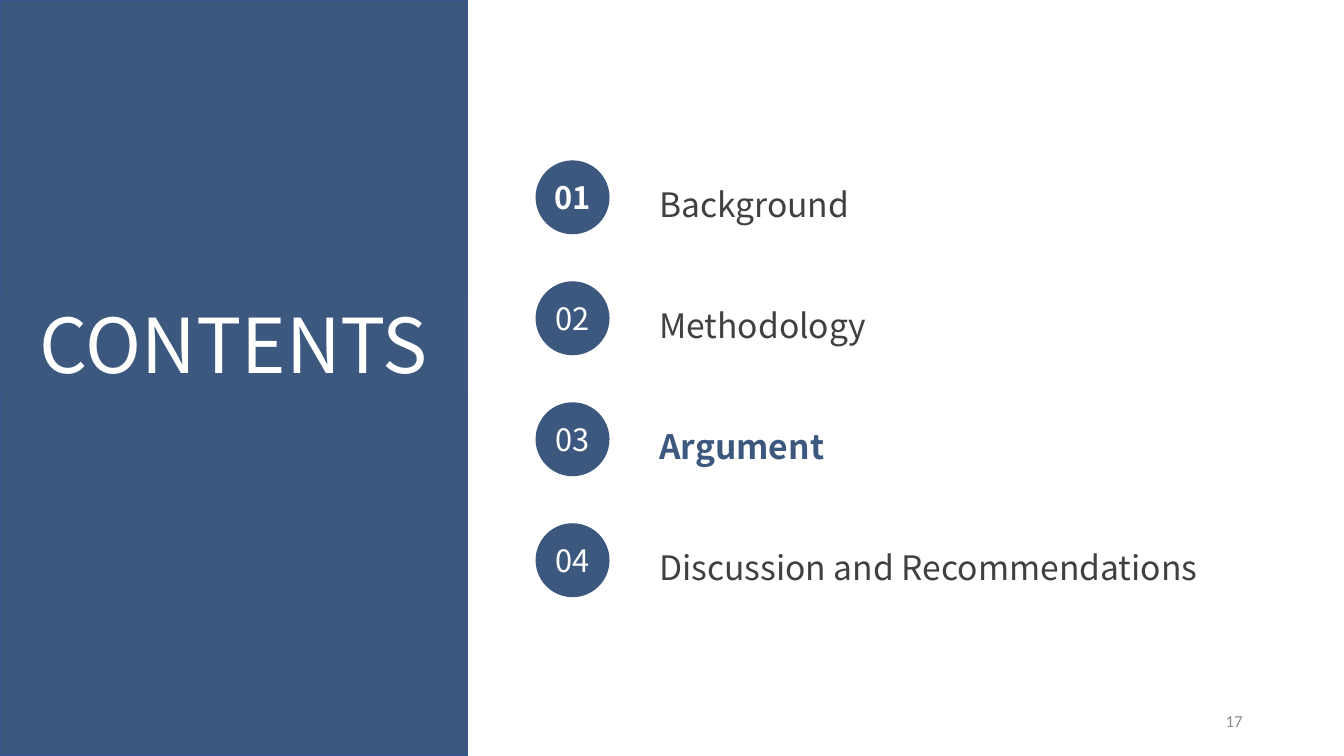
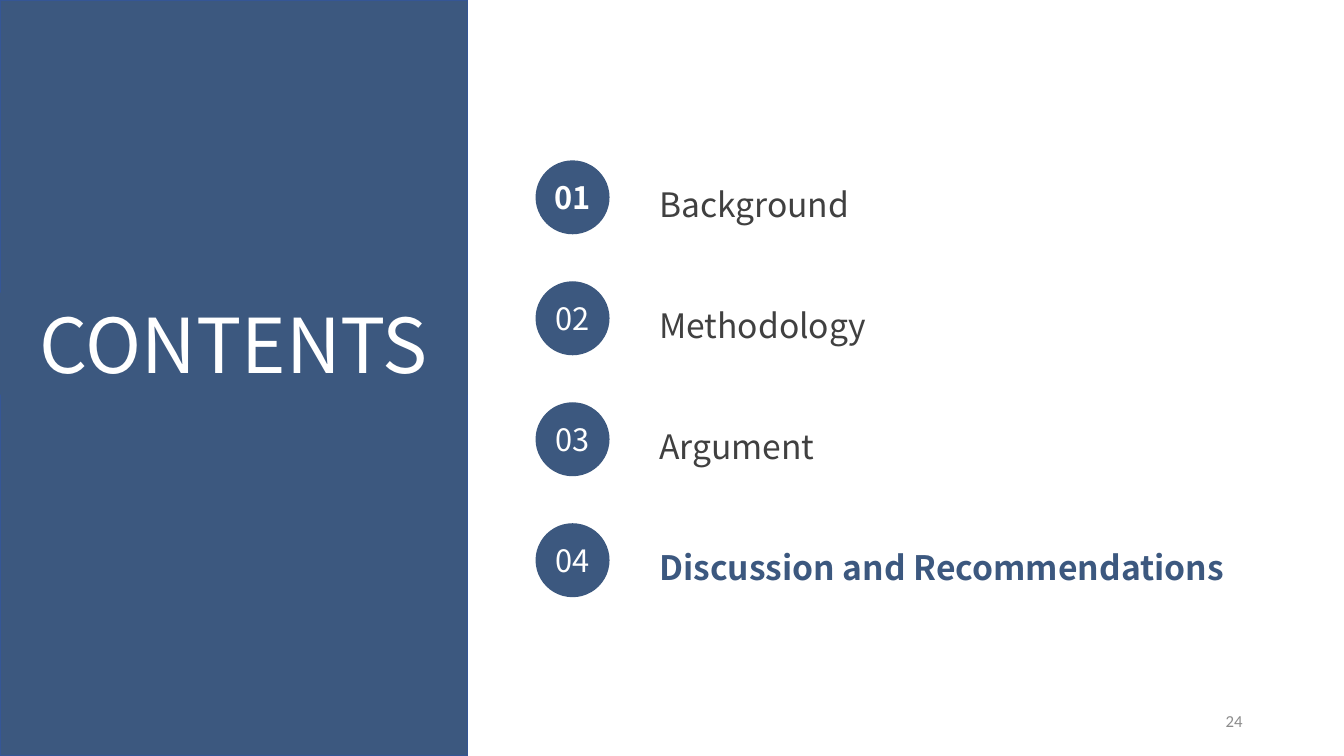
import pptx
import pptx.dml.color
import pptx.enum.shapes
import pptx.enum.text
import pptx.util
from lxml import etree

COLOURS = {
    "navy": "3C587F",
    "edge": "355696",
    "white": "FFFFFF",
    "text": "404040",
    "number": "8C8C8C",
}
FONT = "Noto Sans CJK SC"
ITEMS = ["Background", "Methodology", "Argument", "Discussion and Recommendations"]
SECTIONS = [{"page": "17", "active": "Argument"},
            {"page": "24", "active": "Discussion and Recommendations"}]
ALIGN = pptx.enum.text.PP_ALIGN
ANCHOR = pptx.enum.text.MSO_ANCHOR
SHAPE = pptx.enum.shapes.MSO_SHAPE

presentation = pptx.Presentation()
presentation.slide_width = pptx.util.Inches(13.33)
presentation.slide_height = pptx.util.Inches(7.5)
WIDTH, HEIGHT = presentation.slide_width, presentation.slide_height

panel_width = int(WIDTH * 0.348)
circle_left = int(WIDTH * 0.399)
circle_size = int(HEIGHT * 0.096)
first_row = int(HEIGHT * 0.213)
row_pitch = int(HEIGHT * 0.16)
label_line = pptx.util.Pt(34)


def rgb(name):
    return pptx.dml.color.RGBColor.from_string(COLOURS[name])


def write(paragraph, text, size, colour, font=FONT, bold=False, align=ALIGN.LEFT):
    paragraph.alignment = align
    run = paragraph.add_run()
    run.text = text
    run.font.name = font
    run.font.size = pptx.util.Pt(size)
    run.font.bold = bold
    run.font.color.rgb = rgb(colour)


for section in SECTIONS:
    slide = presentation.slides.add_slide(presentation.slide_layouts[1])
    title, body = slide.shapes.title, slide.placeholders[1]

    # Side panel with the title in front of it
    panel = slide.shapes.add_shape(SHAPE.RECTANGLE, 0, 0, panel_width, HEIGHT)
    panel.shadow.inherit = False
    panel.fill.solid()
    panel.fill.fore_color.rgb = rgb("navy")
    panel.line.color.rgb = rgb("edge")
    panel.line.width = pptx.util.Pt(1)
    panel.element.addnext(title.element)

    title.left, title.top = 0, int(HEIGHT * 0.387)
    title.width, title.height = panel_width, int(HEIGHT * 0.135)
    title.fill.solid()
    title.fill.fore_color.rgb = rgb("navy")
    title.text_frame.auto_size = pptx.enum.text.MSO_AUTO_SIZE.NONE
    title.text_frame.vertical_anchor = ANCHOR.TOP
    write(title.text_frame.paragraphs[0], "CONTENTS", size=54, colour="white",
          align=ALIGN.CENTER)

    # Section list, one row for each circle
    body.left, body.top = int(WIDTH * 0.483), int(HEIGHT * 0.227)
    body.width, body.height = int(WIDTH * 0.467), row_pitch * len(ITEMS)
    body.text_frame.auto_size = pptx.enum.text.MSO_AUTO_SIZE.NONE
    body.text_frame.vertical_anchor = ANCHOR.TOP

    for row, item in enumerate(ITEMS):
        circle = slide.shapes.add_shape(SHAPE.OVAL, circle_left, first_row + row * row_pitch,
                                        circle_size, circle_size)
        circle.shadow.inherit = False
        circle.fill.solid()
        circle.fill.fore_color.rgb = rgb("navy")
        circle.line.color.rgb = rgb("navy")
        circle.line.width = pptx.util.Pt(1)
        frame = circle.text_frame
        frame.word_wrap = False
        frame.margin_left = frame.margin_right = frame.margin_top = frame.margin_bottom = 0
        frame.vertical_anchor = ANCHOR.MIDDLE
        write(frame.paragraphs[0], f"{row + 1:02}", size=22, colour="white",
              bold=row == 0, align=ALIGN.CENTER)

        paragraph = body.text_frame.paragraphs[0] if row == 0 else body.text_frame.add_paragraph()
        active = item == section["active"]
        write(paragraph, item, size=24, colour="navy" if active else "text", bold=active)
        paragraph.line_spacing = label_line
        paragraph.space_before = pptx.util.Pt(0)
        paragraph.space_after = pptx.util.Pt(round((row_pitch - label_line) / 12700, 1))
        properties = paragraph._p.get_or_add_pPr()
        properties.set("marL", "0")
        properties.set("indent", "0")
        etree.SubElement(properties, pptx.oxml.ns.qn("a:buNone"))

    page_box = slide.shapes.add_textbox(int(WIDTH * 0.707), int(HEIGHT * 0.927),
                                        int(WIDTH * 0.225), int(HEIGHT * 0.053))
    page_box.text_frame.word_wrap = True
    page_box.text_frame.vertical_anchor = ANCHOR.MIDDLE
    write(page_box.text_frame.paragraphs[0], section["page"], size=12, colour="number",
          font="Calibri", align=ALIGN.RIGHT)

presentation.save("out.pptx")
